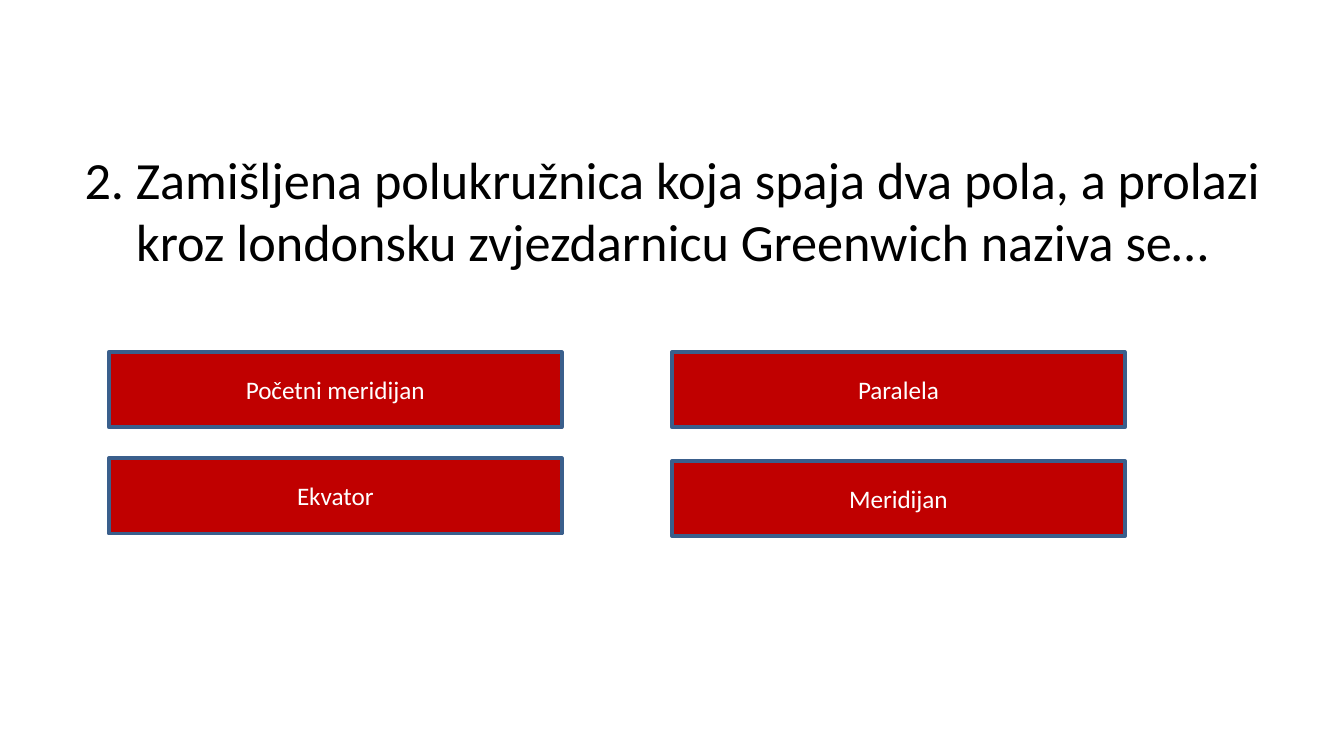
from dataclasses import dataclass

from pptx import Presentation
from pptx.dml.color import RGBColor as Color
from pptx.enum.shapes import MSO_SHAPE as Shape
from pptx.enum.text import MSO_ANCHOR as Anchor, PP_ALIGN as Align
from pptx.util import Inches, Pt


@dataclass(frozen=True)
class Theme:
    """Colours, font and type sizes of the quiz slide."""
    font: str = "Calibri"
    question_color: str = "000000"
    answer_color: str = "FFFFFF"
    answer_fill: str = "C00000"
    answer_border: str = "3A5F8C"
    question_size: float = 28
    answer_size: float = 13.5
    border_width: float = 2


THEME = Theme()
SLIDE_WIDTH = 10
SLIDE_HEIGHT = SLIDE_WIDTH * 9 / 16
MARGIN = 0.05 * SLIDE_WIDTH
GRID_LEFT, GRID_TOP = 0.81, 2.62
COLUMN_STEP = 4.19
ANSWER_WIDTH, ANSWER_HEIGHT = 3.37, 0.56
QUESTION = ("2. Zamišljena polukružnica koja spaja dva pola, a prolazi "
            "kroz londonsku zvjezdarnicu Greenwich naziva se…")
ANSWER_COLUMNS = [
    (0.79, ["Početni meridijan", "Ekvator"]),
    (0.81, ["Paralela", "Meridijan"]),
]


def write_centered(box, text, size, color):
    """Fill a box with one centred paragraph."""
    frame = box.text_frame
    frame.word_wrap = True
    frame.vertical_anchor = Anchor.MIDDLE
    para = frame.paragraphs[0]
    para.text = text
    para.alignment = Align.CENTER
    para.font.name = THEME.font
    para.font.size = Pt(size)
    para.font.color.rgb = Color.from_string(color)


def add_question(page, text):
    """Add the question across the width between the margins."""
    box = page.shapes.add_textbox(
        Inches(MARGIN), Inches(1.17),
        Inches(SLIDE_WIDTH - 2 * MARGIN), Inches(0.78))
    write_centered(box, text, THEME.question_size, THEME.question_color)


def add_answer(page, text, column, row, row_step):
    """Add an answer button at a column and row of the grid."""
    box = page.shapes.add_shape(
        Shape.RECTANGLE,
        Inches(GRID_LEFT + column * COLUMN_STEP),
        Inches(GRID_TOP + row * row_step),
        Inches(ANSWER_WIDTH), Inches(ANSWER_HEIGHT))
    box.shadow.inherit = False
    box.fill.solid()
    box.fill.fore_color.rgb = Color.from_string(THEME.answer_fill)
    box.line.color.rgb = Color.from_string(THEME.answer_border)
    box.line.width = Pt(THEME.border_width)
    write_centered(box, text, THEME.answer_size, THEME.answer_color)


def main():
    """Build and save the quiz slide."""
    deck = Presentation()
    deck.slide_width = Inches(SLIDE_WIDTH)
    deck.slide_height = Inches(SLIDE_HEIGHT)
    page = deck.slides.add_slide(deck.slide_layouts[6])
    add_question(page, QUESTION)
    for column, (row_step, answers) in enumerate(ANSWER_COLUMNS):
        for row, answer in enumerate(answers):
            add_answer(page, answer, column, row, row_step)
    deck.save("out.pptx")


if __name__ == "__main__":
    main()
